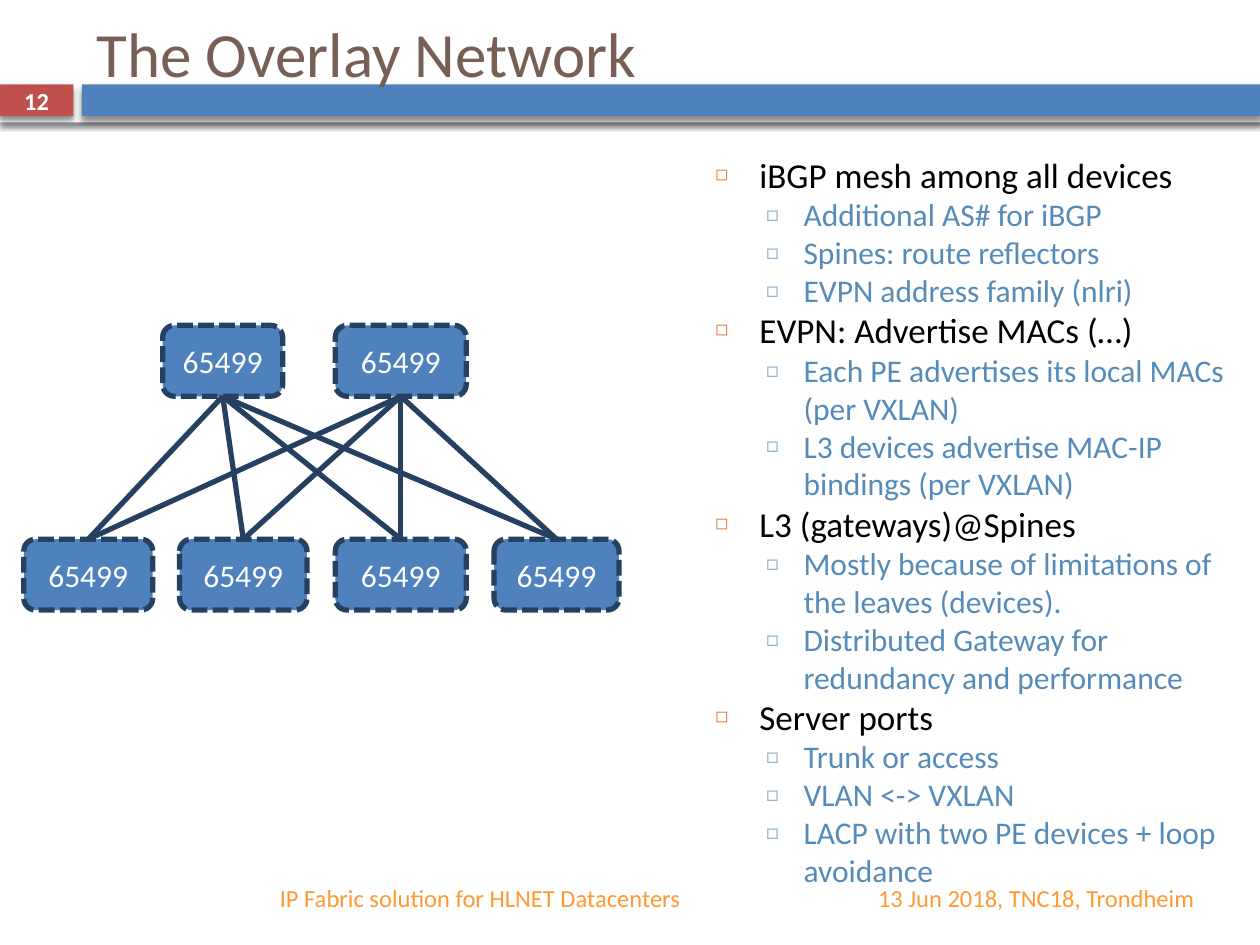
from dataclasses import dataclass
from itertools import product

from lxml import etree
from pptx import Presentation
from pptx import util as u
from pptx.dml.color import RGBColor
from pptx.enum import dml, shapes, text
from pptx.oxml import ns

COLORS = {
    "white": "FFFFFF", "black": "000000", "red": "C0504D", "blue": "4F81BD",
    "navy": "254061", "title": "775F55", "footer": "FF9933", "detail": "558BB8",
    "topic_bullet": "DD8047", "detail_bullet": "94B6D2",
}
FONT = "Calibri"


@dataclass(frozen=True)
class Box:
    left: float
    top: float
    width: float
    height: float

    def lengths(self) -> list[u.Cm]:
        return [u.Cm(n) for n in (self.left, self.top, self.width, self.height)]


@dataclass(frozen=True)
class Level:
    size: int
    color: str
    bullet: str
    bullet_color: str
    bullet_pct: int
    margin: float
    hanging: float


@dataclass(frozen=True)
class Topic:
    heading: str
    details: tuple[str, ...]


TOPIC = Level(20, "black", "◻", "topic_bullet", 60, 0.89, 0.89)
DETAIL = Level(18, "detail", "□", "detail_bullet", 70, 1.78, 0.76)
TOPICS = (
    Topic("iBGP mesh among all devices", (
        "Additional AS# for iBGP",
        "Spines: route reflectors",
        "EVPN address family (nlri)")),
    Topic("EVPN: Advertise MACs (…)", (
        "Each PE advertises its local MACs (per VXLAN)",
        "L3 devices advertise MAC-IP bindings (per VXLAN)")),
    Topic("L3 (gateways)@Spines", (
        "Mostly because of limitations of the leaves (devices).",
        "Distributed Gateway for redundancy and performance")),
    Topic("Server ports", (
        "Trunk or access",
        "VLAN <-> VXLAN",
        "LACP with two PE devices + loop avoidance")),
)
BARS = (
    (Box(0, 1.58, 25.4, 0.89), "white"),
    (Box(0, 1.7, 1.48, 0.64), "red"),
    (Box(1.65, 1.7, 23.75, 0.64), "blue"),
)
AS_NUMBER = "65499"
NODE_HEIGHT = 1.43
SPINE_TOP, LEAF_TOP = 6.56, 10.87
SPINES = ((3.28, 2.42), (6.76, 2.64))
LEAVES = ((0.48, 2.6), (3.62, 2.57), (6.76, 2.64), (9.96, 2.52))


def rgb(name: str) -> RGBColor:
    """Look up a palette colour."""
    return RGBColor.from_string(COLORS[name])


def add_run(p, words: str, size: int, color: str, bold: bool = False) -> None:
    """Append one styled run to a paragraph."""
    r = p.add_run()
    r.text = words
    r.font.name, r.font.size, r.font.bold = FONT, u.Pt(size), bold
    r.font.color.rgb = rgb(color)


def add_label(s, box: Box, words: str, size: int, color: str,
              align=text.PP_ALIGN.LEFT, bold: bool = False) -> None:
    """Add a single-line text box, centred vertically."""
    tf = s.shapes.add_textbox(*box.lengths()).text_frame
    tf.word_wrap = True
    tf.vertical_anchor = text.MSO_ANCHOR.MIDDLE
    tf.paragraphs[0].alignment = align
    add_run(tf.paragraphs[0], words, size, color, bold)


def add_bar(s, box: Box, color: str) -> None:
    """Add a borderless header bar with a soft shadow below it."""
    sp = s.shapes.add_shape(shapes.MSO_SHAPE.RECTANGLE, *box.lengths())
    sp.fill.solid()
    sp.fill.fore_color.rgb = rgb(color)
    sp.line.fill.background()
    sp.shadow.inherit = False
    effects = sp._element.spPr.find(ns.qn("a:effectLst"))
    shadow = etree.SubElement(effects, ns.qn("a:outerShdw"), blurRad=str(u.Pt(3)),
                              dist=str(u.Pt(2.4)), dir="5400000", rotWithShape="0")
    black = etree.SubElement(shadow, ns.qn("a:srgbClr"), val=COLORS["black"])
    etree.SubElement(black, ns.qn("a:alpha"), val="45000")


def add_node(s, box: Box):
    """Add a dashed device box labelled with its AS number."""
    sp = s.shapes.add_shape(shapes.MSO_SHAPE.ROUNDED_RECTANGLE, *box.lengths())
    sp.shadow.inherit = False
    sp.fill.solid()
    sp.fill.fore_color.rgb = rgb("blue")
    sp.line.color.rgb = rgb("navy")
    sp.line.width = u.Pt(3)
    sp.line.dash_style = dml.MSO_LINE.SQUARE_DOT
    tf = sp.text_frame
    tf.vertical_anchor = text.MSO_ANCHOR.MIDDLE
    tf.paragraphs[0].alignment = text.PP_ALIGN.CENTER
    add_run(tf.paragraphs[0], AS_NUMBER, 18, "white")
    return sp


def add_link(s, leaf, spine) -> None:
    """Connect the top of a leaf to the bottom of a spine."""
    line = s.shapes.add_connector(shapes.MSO_CONNECTOR.STRAIGHT, 0, 0, 0, 0)
    line.begin_connect(leaf, 0)
    line.end_connect(spine, 2)
    line.line.color.rgb = rgb("navy")
    line.line.width = u.Pt(3)
    etree.SubElement(line._element.spPr, ns.qn("a:effectLst"))


def add_bullet(p, words: str, level: Level) -> None:
    """Fill a paragraph as a bullet of the given level."""
    pPr = p._p.get_or_add_pPr()
    pPr.set("marL", str(u.Cm(level.margin)))
    pPr.set("indent", str(-u.Cm(level.hanging)))
    color = etree.SubElement(pPr, ns.qn("a:buClr"))
    etree.SubElement(color, ns.qn("a:srgbClr"), val=COLORS[level.bullet_color])
    etree.SubElement(pPr, ns.qn("a:buSzPct"), val=str(level.bullet_pct * 1000))
    etree.SubElement(pPr, ns.qn("a:buFont"), typeface=FONT)
    etree.SubElement(pPr, ns.qn("a:buChar"), char=level.bullet)
    p.level = int(level is DETAIL)
    add_run(p, words, level.size, level.color)


def add_topics(s, box: Box) -> None:
    """Add the two-level bullet list."""
    tf = s.shapes.add_textbox(*box.lengths()).text_frame
    tf.word_wrap = True
    items = [item for topic in TOPICS for item in
             [(topic.heading, TOPIC), *((d, DETAIL) for d in topic.details)]]
    for i, (words, level) in enumerate(items):
        add_bullet(tf.add_paragraph() if i else tf.paragraphs[0], words, level)


def main() -> None:
    """Build the overlay network slide."""
    prs = Presentation()
    prs.slide_width, prs.slide_height = u.Cm(25.4), u.Cm(19.05)
    s = prs.slides.add_slide(prs.slide_layouts[6])
    for box, color in BARS:
        add_bar(s, box, color)
    right, center = text.PP_ALIGN.RIGHT, text.PP_ALIGN.CENTER
    add_label(s, Box(1.7, 0, 22.66, 2.11), "The Overlay Network", 36, "title")
    add_label(s, Box(14.6, 17.58, 9.73, 1.02), "13 Jun 2018, TNC18, Trondheim",
              14, "footer", right)
    add_label(s, Box(3.66, 17.58, 10.31, 1.02),
              "IP Fabric solution for HLNET Datacenters", 14, "footer", right)
    add_label(s, Box(0, 1.68, 1.48, 0.69), "12", 14, "white", center, True)
    spines = [add_node(s, Box(x, SPINE_TOP, w, NODE_HEIGHT)) for x, w in SPINES]
    leaves = [add_node(s, Box(x, LEAF_TOP, w, NODE_HEIGHT)) for x, w in LEAVES]
    for leaf, spine in product(leaves, spines):
        add_link(s, leaf, spine)
    add_topics(s, Box(14.17, 2.97, 11.23, 13.77))
    prs.save("out.pptx")


if __name__ == "__main__":
    main()
